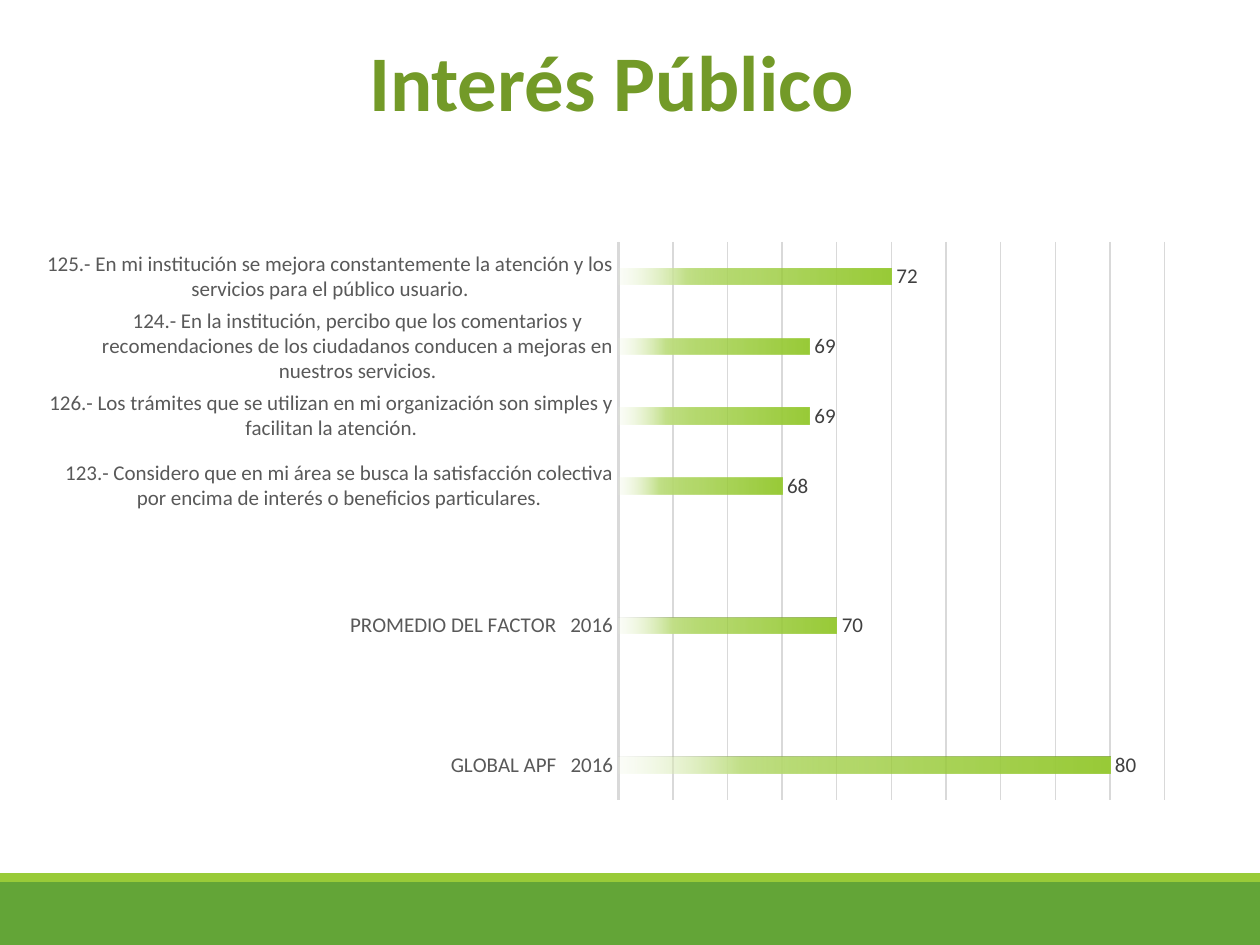
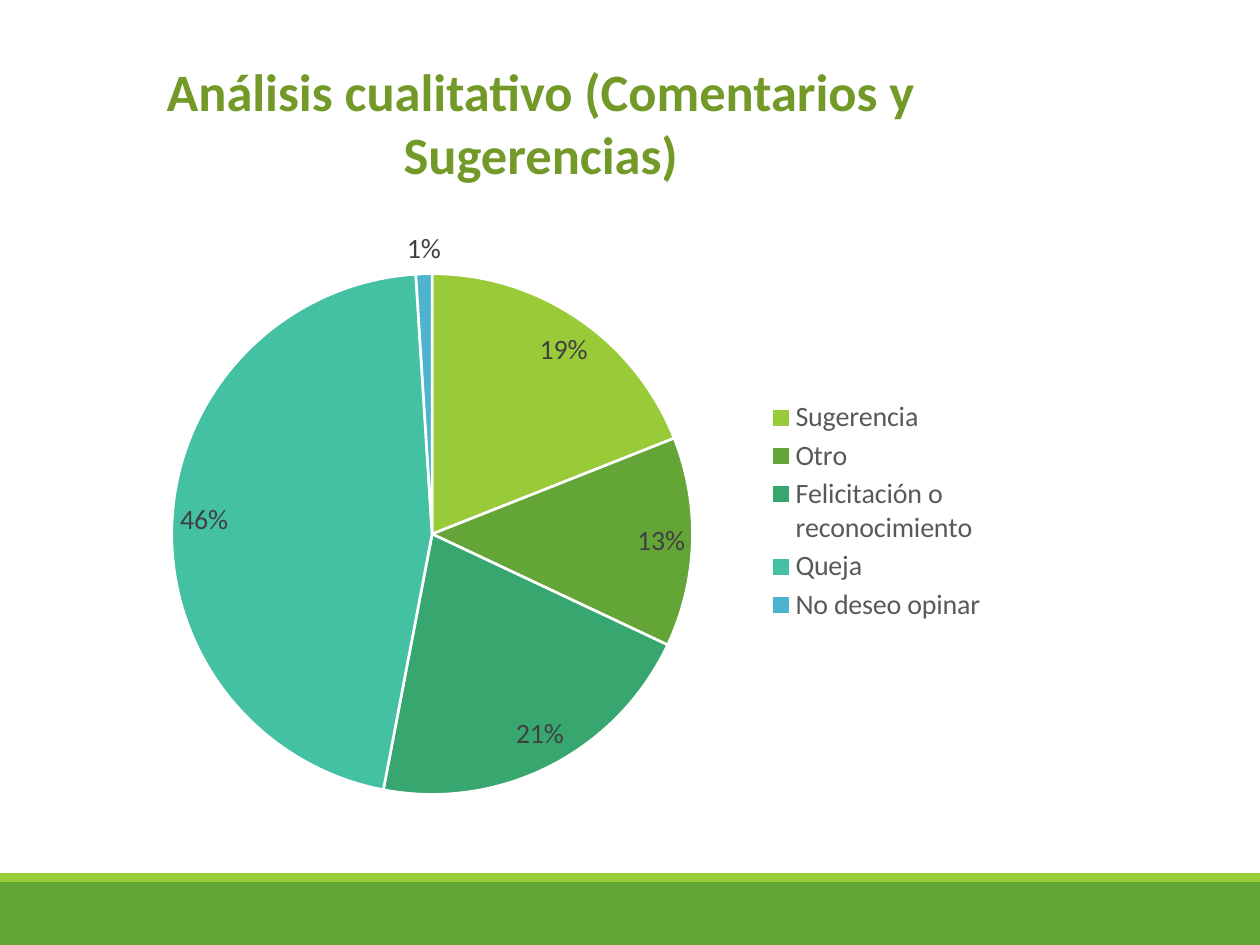
from lxml import etree
from pptx import Presentation
from pptx.chart.data import CategoryChartData
from pptx.dml.color import RGBColor
from pptx.enum.chart import (
    XL_CHART_TYPE, XL_LABEL_POSITION, XL_LEGEND_POSITION,
    XL_TICK_LABEL_POSITION, XL_TICK_MARK)
from pptx.enum.shapes import MSO_SHAPE
from pptx.enum.text import MSO_ANCHOR, MSO_AUTO_SIZE, PP_ALIGN
from pptx.oxml.ns import qn
from pptx.util import Pt

BAR, PIE = XL_CHART_TYPE.BAR_CLUSTERED, XL_CHART_TYPE.PIE
BEST = XL_LABEL_POSITION.BEST_FIT
RIGHT = XL_LEGEND_POSITION.RIGHT
BARE, NO_TICK = XL_TICK_LABEL_POSITION.NONE, XL_TICK_MARK.NONE
RECT = MSO_SHAPE.RECTANGLE
MIDDLE, FIXED, CENTER = MSO_ANCHOR.MIDDLE, MSO_AUTO_SIZE.NONE, PP_ALIGN.CENTER

SCALE = 914400 / 126
WIDE, HIGH = 1260, 945
FONT = "Calibri"
LIME, GREEN, OLIVE = "99CB38", "63A537", "739A28"
WHITE, GRAY, DARK, RULE = "FFFFFF", "595959", "404040", "D9D9D9"
SLICES = [LIME, GREEN, "37A76F", "44C1A3", "4EB3CF"]
FADE = [(0, LIME, 100), (51, LIME, 75), (75, "C2E088", 100), (100, "EBF5D7", 15)]

SCORES = [
    ("125.- En mi institución se mejora constantemente la atención y los "
     "servicios para el público usuario.", 72),
    ("124.- En la institución, percibo que los comentarios y recomendaciones "
     "de los ciudadanos conducen a mejoras en nuestros servicios.", 69),
    ("126.- Los trámites que se utilizan en mi organización son simples y "
     "facilitan la atención.", 69),
    ("123.- Considero que en mi área se busca la satisfacción colectiva por "
     "encima de interés o beneficios particulares.", 68),
    ("", None),
    ("PROMEDIO DEL FACTOR   2016", 70),
    ("", None),
    ("GLOBAL APF   2016", 80),
]
VOICES = [
    ("Sugerencia", 19),
    ("Otro", 13),
    ("Felicitación o reconocimiento", 21),
    ("Queja", 46),
    ("No deseo opinar", 1),
]


def px(*nums):
    return [round(num * SCALE) for num in nums]


def rgb(tone):
    return RGBColor.from_string(tone)


def paint(fill, tone):
    fill.solid()
    fill.fore_color.rgb = rgb(tone)


def style(font, size, tone, bold=False):
    font.name, font.size, font.bold = FONT, Pt(size), bold
    font.color.rgb = rgb(tone)


def stroke(line, tone, width):
    paint(line.fill, tone)
    line.width = Pt(width)


def band(slide, box, tone):
    shape = slide.shapes.add_shape(RECT, *px(*box))
    shape.shadow.inherit = False
    paint(shape.fill, tone)
    shape.line.fill.background()


def frame(deck, text, box, size):
    slide = deck.slides.add_slide(deck.slide_layouts[5])
    paint(slide.background.fill, WHITE)
    band(slide, (0, 882, WIDE, 63), GREEN)
    band(slide, (0, 873, WIDE, 9), LIME)
    title = slide.shapes.title
    title.left, title.top, title.width, title.height = px(*box)
    body = title.text_frame
    body.word_wrap, body.auto_size = True, FIXED
    body.vertical_anchor = MIDDLE
    line = body.paragraphs[0]
    line.alignment = CENTER
    run = line.add_run()
    run.text = text
    style(run.font, size, OLIVE, True)
    return slide


def place(host, spot, index, inner=False):
    for old in host.findall(qn("c:layout")):
        host.remove(old)
    layout = etree.Element(qn("c:layout"))
    manual = etree.SubElement(layout, qn("c:manualLayout"))
    rules = [("layoutTarget", "inner")] if inner else []
    rules += [("xMode", "edge"), ("yMode", "edge")]
    rules += zip("xywh", spot)
    for name, value in rules:
        etree.SubElement(manual, qn("c:" + name), val=str(value))
    host.insert(index, layout)


def graph(slide, kind, rows, box, spot, size):
    data = CategoryChartData()
    data.categories = [name for name, _ in rows]
    data.add_series("Series 1", [value for _, value in rows])
    chart = slide.shapes.add_chart(kind, *px(*box), data).chart
    chart.has_title = chart.has_legend = False
    style(chart.font, size, GRAY)
    place(chart._chartSpace.chart.plotArea, spot, 0, True)
    plot = chart.plots[0]
    plot.vary_by_categories = kind == PIE
    plot.has_data_labels = True
    style(plot.data_labels.font, size, DARK)
    return chart, plot


def fade(series):
    props = series._element.get_or_add_spPr()
    grad = etree.Element(qn("a:gradFill"), rotWithShape="1")
    stops = etree.SubElement(grad, qn("a:gsLst"))
    for pos, tone, alpha in FADE:
        stop = etree.SubElement(stops, qn("a:gs"), pos=str(pos * 1000))
        color = etree.SubElement(stop, qn("a:srgbClr"), val=tone)
        if alpha < 100:
            etree.SubElement(color, qn("a:alpha"), val=str(alpha * 1000))
    etree.SubElement(grad, qn("a:lin"), ang="10800000", scaled="0")
    props.insert(0, grad)


def bars(slide, box):
    chart, plot = graph(slide, BAR, SCORES, box, (0.506, 0.091, 0.484, 0.893), 12)
    plot.gap_width, plot.overlap = 326, -58
    labels = plot.data_labels
    labels.show_value = True
    labels.number_format, labels.number_format_is_linked = "0", False
    series = plot.series[0]
    series.invert_if_negative = False
    series.format.line.fill.background()
    fade(series)
    names, scale = chart.category_axis, chart.value_axis
    names.reverse_order = True
    stroke(names.format.line, RULE, 1.5)
    for axis in (names, scale):
        axis.major_tick_mark = axis.minor_tick_mark = NO_TICK
        style(axis.tick_labels.font, 12, GRAY)
    scale.minimum_scale, scale.maximum_scale, scale.major_unit = 62, 82, 2
    scale.tick_label_position = BARE
    scale.format.line.fill.background()
    scale.has_major_gridlines = True
    stroke(scale.major_gridlines.format.line, RULE, 0.75)


def pie(slide, box):
    chart, plot = graph(slide, PIE, VOICES, box, (0.08, 0.128, 0.606, 0.815), 16)
    labels = plot.data_labels
    labels.show_value, labels.show_percentage = False, True
    labels.number_format, labels.number_format_is_linked = "0%", False
    labels.position = BEST
    for index, tone in enumerate(SLICES):
        look = plot.series[0].points[index].format
        paint(look.fill, tone)
        stroke(look.line, WHITE, 1.5)
    chart.has_legend = True
    legend = chart.legend
    legend.position, legend.include_in_layout = RIGHT, False
    style(legend.font, 16, GRAY)
    place(legend._element, (0.74, 0.32, 0.25, 0.36), 1)


def main():
    deck = Presentation()
    deck.slide_width, deck.slide_height = px(WIDE, HIGH)
    slide = frame(deck, "Interés Público", (69, 26, 1085, 108), 45)
    bars(slide, (47, 185, 1129, 625))
    slide = frame(deck, "Análisis cualitativo (Comentarios y Sugerencias)",
                  (15, 52, 1052, 140), 30)
    pie(slide, (79, 192, 922, 639))
    deck.save("out.pptx")


if __name__ == "__main__":
    main()
